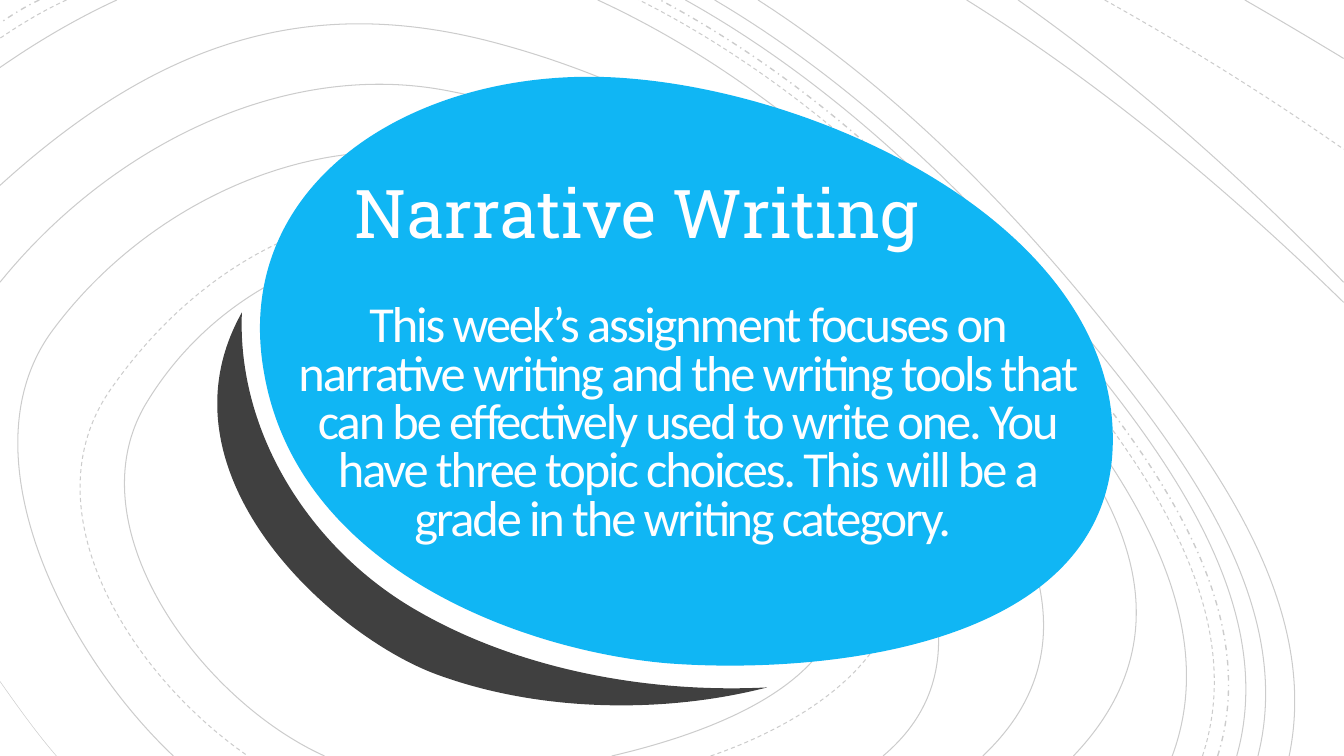
from dataclasses import dataclass

from lxml import etree
from pptx import Presentation
from pptx.dml.color import RGBColor
from pptx.enum.dml import MSO_LINE
from pptx.enum.text import MSO_ANCHOR, MSO_AUTO_SIZE, PP_ALIGN
from pptx.oxml.ns import qn
from pptx.util import Pt

SOLID, DASH, DOT = MSO_LINE.SOLID, MSO_LINE.DASH, MSO_LINE.DASH_DOT
TOP, BOTTOM = MSO_ANCHOR.TOP, MSO_ANCHOR.BOTTOM
CENTER = PP_ALIGN.CENTER
FIXED = MSO_AUTO_SIZE.NONE


@dataclass(frozen=True)
class Theme:
    ring: RGBColor = RGBColor(0, 0, 0)
    blue: RGBColor = RGBColor(0x10, 0xB6, 0xF4)
    dark: RGBColor = RGBColor(0x40, 0x40, 0x40)
    text: RGBColor = RGBColor(0xFF, 0xFE, 0xFF)
    head: str = "Roboto Slab"
    body: str = "Calibri"
    large: float = 48
    small: float = 36
    alpha: int = 20000


THEME = Theme()
WIDE, HIGH = 960, 540
GRID = Pt(0.72)
EDGE = 1333

HEADING = "Narrative Writing"
TASK = (
    "This week’s assignment focuses on narrative writing and the writing tools "
    "that can be effectively used to write one. You have three topic choices. "
    "This will be a grade in the writing category. "
)

LOOPS = [
    (SOLID, [876, 750, 1025, 625, 835, 409, 649, 230, 536, 164,
             287, 141, 141, 208, -36, 447, 60, 644, 172, 750]),
    (SOLID, [607, 750, 710, 726, 880, 667, 773, 399, 615, 278,
             357, 220, 216, 281, 73, 524, 200, 695, 322, 750]),
    (DASH, [705, 750, 850, 700, 960, 592, 723, 329, 592, 227,
            319, 195, 193, 267, 27, 504, 127, 668, 246, 750]),
    (SOLID, [975, 750, 1130, 604, 950, 413, 732, 206, 603, 120, 284, 59, 111, 143, 0, 280]),
    (SOLID, [1065, 750, 1213, 595, 1067, 422, 817, 189, 667, 87, 298, -6, 152, 46, 0, 184]),
]
NEAR = [1163, 750, 1226, 581, 1064, 401, 858, 170, 736, 66, 593, 0]
FAR = [1279, 750, 1312, 590, 1190, 438, 1000, 202, 886, 86, 752, 0]
ARCS = [(SOLID, 0), (DASH, 0.26), (DOT, 0.39), (SOLID, 0.55), (SOLID, 0.73), (SOLID, 1)]
CORNERS = [(SOLID, 116), (DASH, 66), (DOT, 39)]
EXITS = [(SOLID, 959, 300, 33), (SOLID, 1010, 280, 26),
         (DASH, 1096, 148, 8), (SOLID, 1235, 58, 1)]

INNER = [240, 310, 235, 430, 308, 543, 510, 663, 640, 688, 761, 682]
OUTER = [761, 682, 660, 708, 536, 707, 330, 631, 150, 470, 240, 310]
PEBBLE = [227, 175, 423, 60, 829, 95, 1108, 231, 1100, 648, 803, 669, 521, 646, 296, 566]


def pairs(nums):
    return list(zip(nums[::2], nums[1::2]))


def blend(a, b, part=0.5):
    return tuple(p + (q - p) * part for p, q in zip(a, b))


def smooth(nums):
    dots = pairs(nums)
    out = dots[:3]
    for i in range(3, len(dots) - 1, 2):
        out += [blend(dots[i - 1], dots[i]), dots[i], dots[i + 1]]
    return out + dots[-1:]


def loop(nums):
    dots = pairs(nums)
    start = blend(dots[-1], dots[0])
    flat = [n for dot in (start, *dots, start) for n in dot]
    return smooth(flat)


def bow(a, b, lift):
    x, y = blend(a, b)
    peak = (x, y - lift)
    return [a, blend(a, peak, 2 / 3), blend(b, peak, 2 / 3), b]


def curve(shapes, box, dots, closed=False):
    pen = shapes.build_freeform(*dots[0], scale=GRID)
    pen.add_line_segments(dots[1:], close=False)
    shape = pen.convert_to_shape(Pt(box[0]), Pt(box[1]))
    shape.shadow.inherit = False
    track = shape.element.find(".//" + qn("a:path"))
    steps = track.findall(qn("a:lnTo"))
    for i in range(0, len(steps), 3):
        bend = etree.SubElement(track, qn("a:cubicBezTo"))
        for step in steps[i:i + 3]:
            bend.append(step[0])
            track.remove(step)
    if closed:
        etree.SubElement(track, qn("a:close"))
    return shape


def rings(slide, box):
    group = slide.shapes.add_group_shape()
    lines = [(dash, smooth(nums)) for dash, nums in LOOPS]
    lines += [(dash, smooth(blend(NEAR, FAR, part))) for dash, part in ARCS]
    lines += [(dash, bow((x, 0), (0, 0.58 * x), 0.06 * x)) for dash, x in CORNERS]
    lines += [(dash, bow((x, 0), (EDGE, y), lift)) for dash, x, y, lift in EXITS]
    lines.append((SOLID, bow((0, 676), (56, 750), -4)))
    for dash, dots in lines:
        ring = curve(group.shapes, box, dots)
        ring.fill.background()
        ring.line.width = Pt(1 if dash == DOT else 0.75)
        ring.line.color.rgb = THEME.ring
        ring.line.dash_style = dash
        tint = ring.element.find(".//" + qn("a:srgbClr"))
        etree.SubElement(tint, qn("a:alpha"), val=str(THEME.alpha))
    ring.line.width = Pt(0.38)


def stone(slide, box):
    moon = smooth(INNER) + smooth(OUTER)[1:]
    for dots, color in ((moon, THEME.dark), (loop(PEBBLE), THEME.blue)):
        shape = curve(slide.shapes, box, dots, closed=True)
        shape.fill.solid()
        shape.fill.fore_color.rgb = color
        shape.line.fill.background()


def label(slide, holder, box, text, font, size, inset, anchor):
    slide.shapes.element.append(holder.element)
    holder.left, holder.top, holder.width, holder.height = map(Pt, box)
    frame = holder.text_frame
    frame.text = text
    frame.word_wrap = True
    frame.auto_size = FIXED
    frame.vertical_anchor = anchor
    (frame.margin_left, frame.margin_top,
     frame.margin_right, frame.margin_bottom) = map(Pt, inset)
    para = frame.paragraphs[0]
    para.alignment = CENTER
    run = para.runs[0]
    run.font.name = font
    run.font.size = Pt(size)
    run.font.color.rgb = THEME.text
    return para


def task(slide, box):
    para = label(slide, slide.shapes.title, box, TASK, THEME.body, THEME.small,
                 (18, 18, 18, 0), BOTTOM)
    para.line_spacing = 0.8
    para.runs[0].font._element.set("spc", "-150")


def heading(slide, box):
    para = label(slide, slide.placeholders[1], box, HEADING, THEME.head, THEME.large,
                 (7.2, 0, 7.2, 3.6), TOP)
    para.space_before = Pt(10)
    props = para._p.get_or_add_pPr()
    props.set("marL", "0")
    props.set("indent", "0")
    etree.SubElement(props, qn("a:buNone"))


def main():
    deck = Presentation()
    deck.slide_width, deck.slide_height = Pt(WIDE), Pt(HIGH)
    slide = deck.slides.add_slide(deck.slide_layouts[1])
    page = (0, 0, WIDE, HIGH)
    rings(slide, page)
    stone(slide, page)
    task(slide, (193, 191, 596, 199))
    heading(slide, (242, 122.4, 426, 94))
    deck.save("out.pptx")


if __name__ == "__main__":
    main()
